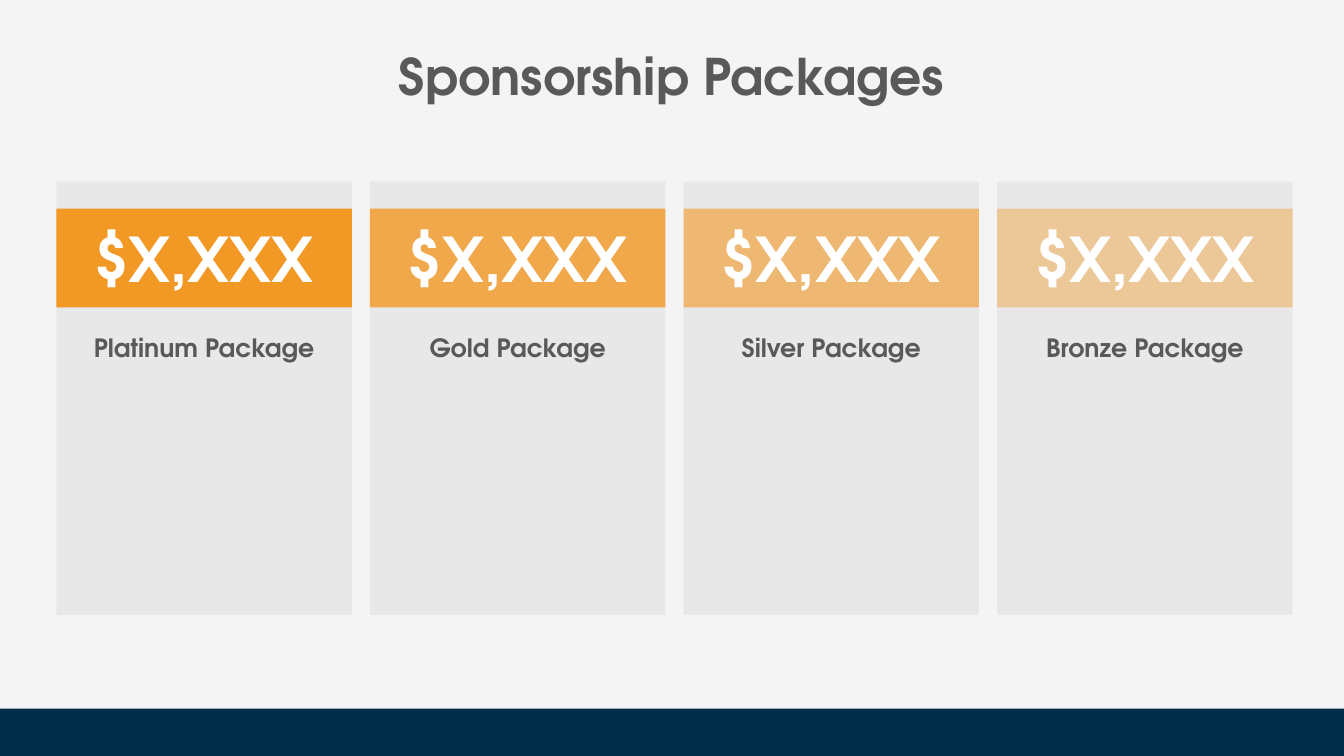
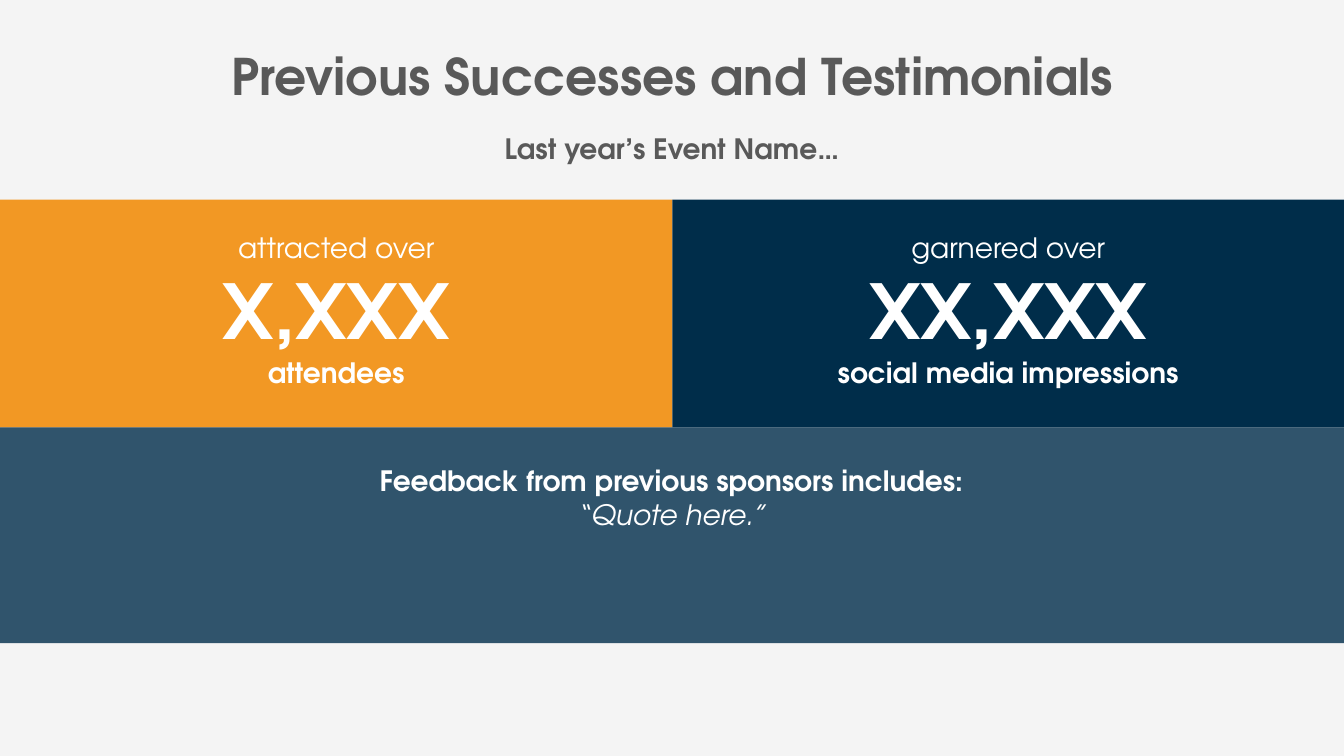
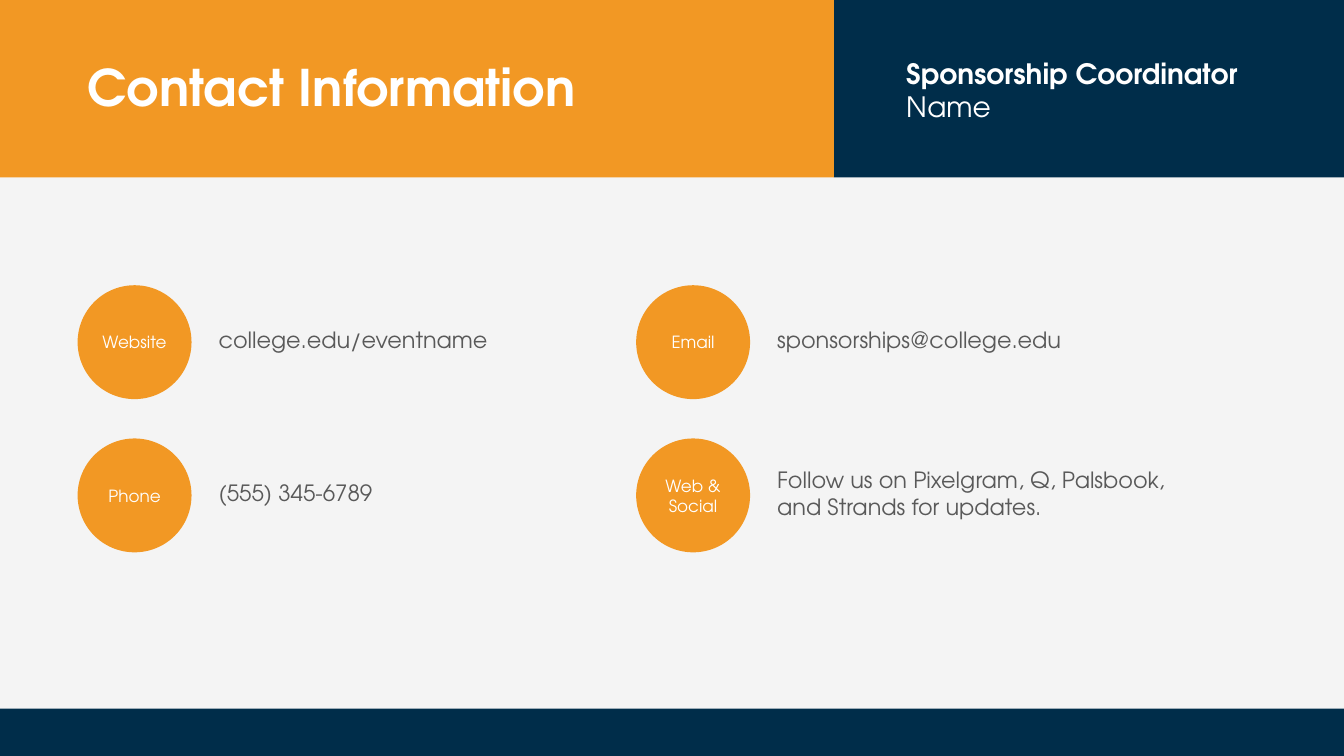
from dataclasses import dataclass

from lxml.etree import SubElement
from pptx import Presentation
from pptx.dml.color import RGBColor
from pptx.enum.shapes import MSO_SHAPE
from pptx.enum.text import MSO_ANCHOR, MSO_AUTO_SIZE, PP_ALIGN
from pptx.oxml.ns import qn
from pptx.util import Emu, Pt

EMU_PER_PX = 9144
SLIDE_WIDTH = 1333
SLIDE_HEIGHT = 750


def px(length):
    return Emu(length * EMU_PER_PX)


@dataclass(frozen=True)
class Box:
    left: int
    top: int
    width: int
    height: int

    def inner(self, left, top, width, height):
        return Box(self.left + left, self.top + top, width, height)

    def emu(self):
        return [px(length) for length in (self.left, self.top, self.width, self.height)]


@dataclass(frozen=True)
class Theme:
    font: str = "TeX Gyre Adventor"
    background: str = "F4F4F4"
    card: str = "E7E6E6"
    orange: str = "F29824"
    navy: str = "002D4A"
    gray: str = "595959"
    white: str = "FFFFFF"
    styles = {
        "title": {"size": Pt(36), "bold": True},
        "price": {"size": Pt(44), "bold": True},
        "figure": {"size": Pt(54), "bold": True},
        "package": {"size": Pt(18), "bold": True},
        "strong": {"size": Pt(20), "bold": True},
        "light": {"size": Pt(20), "bold": False},
        "quote": {"size": Pt(20), "bold": False, "italic": True},
        "detail": {"size": Pt(16), "bold": False},
        "label": {"size": Pt(12), "bold": False},
    }


THEME = Theme()
GROWING = {"auto_size": MSO_AUTO_SIZE.SHAPE_TO_FIT_TEXT}
MIDDLE = {"vertical_anchor": MSO_ANCHOR.MIDDLE}


def apply_format(target, values):
    for name, value in values.items():
        setattr(target, name, value)


def write(shape, lines, color, alignment=PP_ALIGN.CENTER, frame_format=MIDDLE):
    frame = shape.text_frame
    apply_format(frame, {"word_wrap": True, **frame_format})
    for index, (text, style) in enumerate(lines):
        paragraph = frame.add_paragraph() if index else frame.paragraphs[0]
        paragraph.alignment = alignment
        run = paragraph.add_run()
        run.text = text
        apply_format(run.font, {"name": THEME.font, **THEME.styles[style]})
        run.font.color.rgb = RGBColor.from_string(color)


def add_text(slide, box, lines, color, alignment=PP_ALIGN.CENTER, frame_format=GROWING):
    shape = slide.shapes.add_textbox(*box.emu())
    write(shape, lines, color, alignment, frame_format)


def add_panel(slide, box, color, opacity=100, preset=MSO_SHAPE.RECTANGLE):
    shape = slide.shapes.add_shape(preset, *box.emu())
    shape.shadow.inherit = False
    shape.line.fill.background()
    shape.fill.solid()
    shape.fill.fore_color.rgb = RGBColor.from_string(color)
    if opacity < 100:
        fill_color = shape.element.xpath("./p:spPr/a:solidFill/a:srgbClr")[0]
        SubElement(fill_color, qn("a:alpha"), val=str(opacity * 1000))
    return shape


def add_title(slide, text, width):
    box = Box((SLIDE_WIDTH - width) // 2, 40, width, 71)
    add_text(slide, box, [(text, "title")], THEME.gray)


def add_footer(slide):
    add_panel(slide, Box(0, 703, SLIDE_WIDTH, 47), THEME.navy)


def add_package(slide, box, name, opacity):
    card = add_panel(slide, box, THEME.card, 80)
    insets = {
        "margin_left": px(30),
        "margin_top": px(150),
        "margin_right": px(30),
        "margin_bottom": px(30),
        "vertical_anchor": MSO_ANCHOR.TOP,
    }
    write(card, [(name, "package")], THEME.gray, frame_format=insets)
    band = add_panel(slide, box.inner(0, 27, box.width, 98), THEME.orange, opacity)
    write(band, [("$X,XXX", "price")], THEME.white)


def add_statistic(slide, box, color, lines):
    add_panel(slide, box, color)
    styled_lines = list(zip(lines, ("light", "figure", "strong")))
    add_text(slide, box.inner(0, 26, box.width, 168), styled_lines, THEME.white)


def add_feedback(slide, box):
    add_panel(slide, box, THEME.navy, 80)
    lines = [
        ("Feedback from previous sponsors includes:", "strong"),
        ("“Quote here.”", "quote"),
    ]
    add_text(slide, box.inner(282, 31, 768, 77), lines, THEME.white)


def add_contact(slide, box, label, detail):
    circle = add_panel(
        slide, box.inner(0, 0, box.height, box.height), THEME.orange, preset=MSO_SHAPE.OVAL
    )
    insets = {"margin_left": 0, "margin_right": 0, **MIDDLE}
    write(circle, [(label, "label")], THEME.white, frame_format=insets)
    detail_box = box.inner(130, 22, box.width - 130, 64)
    add_text(slide, detail_box, [(detail, "detail")], THEME.gray, PP_ALIGN.LEFT, MIDDLE)


def add_contact_header(slide, box):
    split = 827
    add_panel(slide, box.inner(split, 0, box.width - split, box.height), THEME.navy)
    add_panel(slide, box.inner(0, 0, split, box.height), THEME.orange)
    title = [("Contact Information", "title")]
    add_text(slide, box.inner(77, 51, 566, 71), title, THEME.white, PP_ALIGN.LEFT)
    coordinator = [("Sponsorship Coordinator", "strong"), ("Name", "light")]
    add_text(slide, box.inner(889, 51, 394, 77), coordinator, THEME.white, PP_ALIGN.LEFT)


def build_packages(slide):
    add_title(slide, "Sponsorship Packages", 768)
    card_width, gap = 293, 18
    packages = [("Platinum", 100), ("Gold", 80), ("Silver", 60), ("Bronze", 40)]
    for column, (name, opacity) in enumerate(packages):
        box = Box(56 + column * (card_width + gap), 180, card_width, 430)
        add_package(slide, box, f"{name} Package", opacity)
    add_footer(slide)


def build_successes(slide):
    add_title(slide, "Previous Successes and Testimonials", 991)
    subtitle = [("Last year’s Event Name…", "strong")]
    add_text(slide, Box(333, 126, 667, 44), subtitle, THEME.gray)
    half = 667
    add_statistic(
        slide, Box(0, 198, half, 226), THEME.orange, ("attracted over", "X,XXX", "attendees")
    )
    add_statistic(
        slide,
        Box(half, 198, SLIDE_WIDTH - half, 226),
        THEME.navy,
        ("garnered over", "XX,XXX", "social media impressions"),
    )
    add_feedback(slide, Box(0, 424, SLIDE_WIDTH, 214))


def build_contacts(slide):
    add_contact_header(slide, Box(0, 0, SLIDE_WIDTH, 176))
    contacts = [
        ("Website", "college.edu/eventname"),
        ("Email", "sponsorships@college.edu"),
        ("Phone", "(555) 345-6789"),
        ("Web & Social", "Follow us on Pixelgram, Q, Palsbook, and Strands for updates."),
    ]
    for index, (label, detail) in enumerate(contacts):
        row, column = divmod(index, 2)
        box = Box(77 + column * 554, 283 + row * 152, 554, 113)
        add_contact(slide, box, label, detail)
    add_footer(slide)


def main():
    presentation = Presentation()
    apply_format(
        presentation, {"slide_width": px(SLIDE_WIDTH), "slide_height": px(SLIDE_HEIGHT)}
    )
    background = presentation.slide_master.background.fill
    background.solid()
    background.fore_color.rgb = RGBColor.from_string(THEME.background)
    blank_layout = presentation.slide_layouts[6]
    for build in (build_packages, build_successes, build_contacts):
        build(presentation.slides.add_slide(blank_layout))
    presentation.save("out.pptx")


if __name__ == "__main__":
    main()
